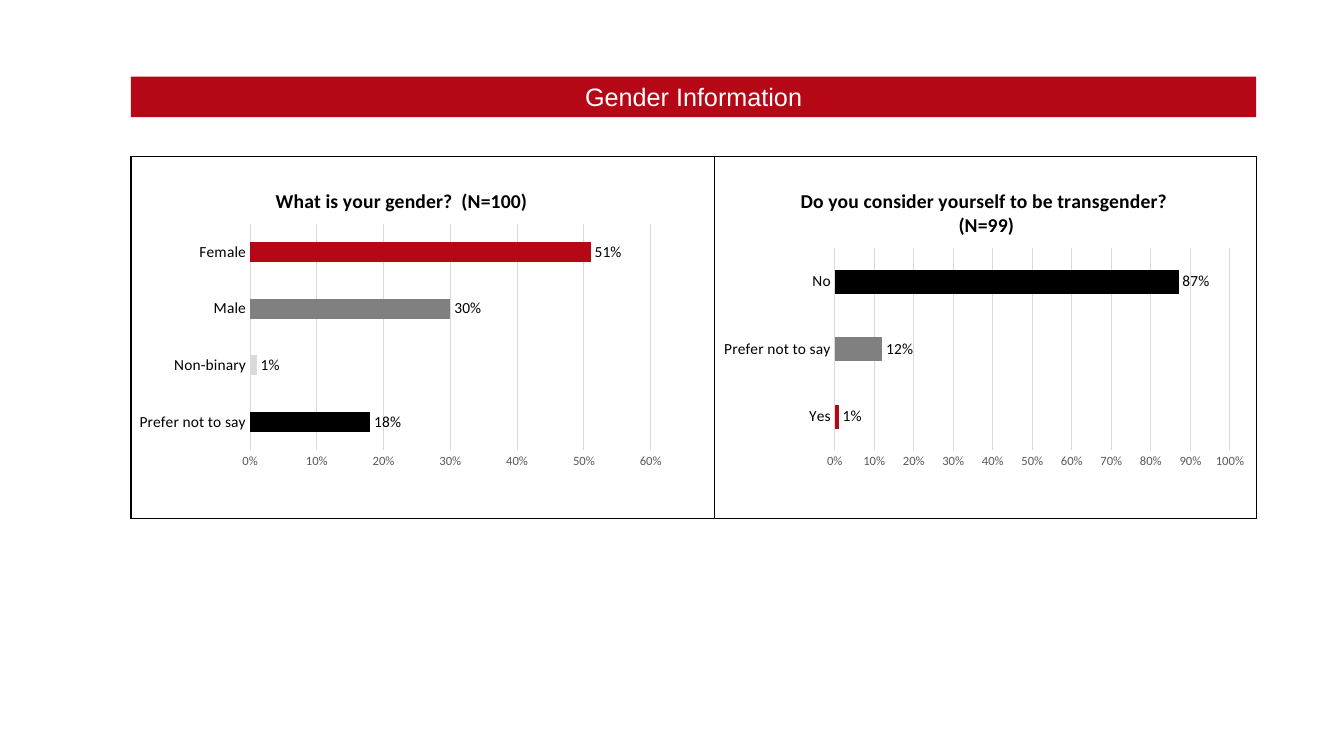
from dataclasses import dataclass

from pptx import Presentation
from pptx.chart.data import CategoryChartData as ChartData
from pptx.dml.color import RGBColor
from pptx.enum.chart import XL_CHART_TYPE as ChartType
from pptx.enum.chart import XL_LABEL_POSITION as LabelPosition
from pptx.enum.chart import XL_TICK_MARK as TickMark
from pptx.enum.shapes import MSO_SHAPE as Preset
from pptx.enum.text import MSO_ANCHOR as Anchor
from pptx.enum.text import MSO_AUTO_SIZE as AutoSize
from pptx.enum.text import PP_ALIGN as Align
from pptx.oxml import parse_xml
from pptx.oxml.ns import nsdecls
from pptx.util import Cm, Pt


@dataclass(frozen=True)
class Theme:
    red: str = "B60717"
    black: str = "000000"
    gray: str = "808080"
    light: str = "D9D9D9"
    muted: str = "595959"
    white: str = "FFFFFF"
    series: str = "5B9BD5"
    banner_font: str = "Arial"
    chart_font: str = "Calibri"
    banner_size: int = 18
    heading_size: int = 14
    label_size: int = 11
    base_size: int = 10
    scale_size: int = 9


def set_values(target, values):
    for name, value in values.items():
        setattr(target, name, value)


class SlideBuilder:
    def __init__(self, deck, theme):
        self.theme = theme
        self.slide = deck.slides.add_slide(deck.slide_layouts[5])

    def style_font(self, font, name, size, color, bold=False):
        set_values(font, {"name": name, "size": Pt(size), "bold": bold})
        font.color.rgb = RGBColor.from_string(color)

    def style_fill(self, fill, color):
        fill.solid()
        fill.fore_color.rgb = RGBColor.from_string(color)

    def style_line(self, line, color, width):
        self.style_fill(line.fill, color)
        line.width = Pt(width)

    def banner(self, text, left, top, width, height):
        theme = self.theme
        box = self.slide.shapes.title
        set_values(box, {"left": Cm(left), "top": Cm(top),
                         "width": Cm(width), "height": Cm(height)})
        self.style_fill(box.fill, theme.red)
        set_values(box.text_frame, {"word_wrap": True, "auto_size": AutoSize.NONE,
                                    "vertical_anchor": Anchor.MIDDLE})
        para = box.text_frame.paragraphs[0]
        para.alignment = Align.CENTER
        span = para.add_run()
        span.text = text
        self.style_font(span.font, theme.banner_font, theme.banner_size, theme.white)

    def frame(self, left, top, width, height):
        box = self.slide.shapes.add_shape(
            Preset.RECTANGLE, Cm(left), Cm(top), Cm(width), Cm(height))
        box.shadow.inherit = False
        box.fill.background()
        self.style_line(box.line, self.theme.black, 1)

    def bar_chart(self, heading, bars, maximum, area, left, top, width, height):
        theme = self.theme
        data = ChartData(number_format="0%")
        data.categories = [name for name, _, _ in bars]
        data.add_series("Series 1", [value for _, value, _ in bars])
        chart = self.slide.shapes.add_chart(
            ChartType.BAR_CLUSTERED, Cm(left), Cm(top), Cm(width), Cm(height), data).chart
        chart.has_legend = False
        self.style_font(chart.font, theme.chart_font, theme.base_size, theme.black)
        self.chart_heading(chart, heading)
        self.axes(chart, maximum)
        self.bars(chart.plots[0], [color for _, _, color in bars])
        self.plot_area(chart, area)

    def chart_heading(self, chart, heading):
        theme = self.theme
        chart.has_title = True
        chart.chart_title.include_in_layout = False
        span = chart.chart_title.text_frame.paragraphs[0].add_run()
        span.text = heading
        self.style_font(span.font, theme.chart_font, theme.heading_size, theme.black, True)

    def axes(self, chart, maximum):
        theme = self.theme
        names, scale = chart.category_axis, chart.value_axis
        for axis, size, color in ((names, theme.label_size, theme.black),
                                  (scale, theme.scale_size, theme.muted)):
            set_values(axis, {"major_tick_mark": TickMark.NONE,
                              "minor_tick_mark": TickMark.NONE})
            self.style_font(axis.tick_labels.font, theme.chart_font, size, color)
        names.has_major_gridlines = False
        self.style_line(names.format.line, theme.light, 0.75)
        set_values(scale, {"minimum_scale": 0, "maximum_scale": maximum,
                           "major_unit": 0.1, "has_major_gridlines": True})
        set_values(scale.tick_labels, {"number_format": "0%",
                                       "number_format_is_linked": False})
        scale.format.line.fill.background()
        self.style_line(scale.major_gridlines.format.line, theme.light, 0.75)

    def bars(self, plot, colors):
        theme = self.theme
        set_values(plot, {"gap_width": 182, "vary_by_categories": False})
        series = plot.series[0]
        series.invert_if_negative = False
        self.style_fill(series.format.fill, theme.series)
        for index, color in enumerate(colors):
            self.style_fill(series.points[index].format.fill, color)
        labels = series.data_labels
        set_values(labels, {"show_value": True, "position": LabelPosition.OUTSIDE_END,
                            "number_format": "0%", "number_format_is_linked": False})
        self.style_font(labels.font, theme.chart_font, theme.label_size, theme.black)

    def plot_area(self, chart, area):
        plot_area = chart.element.xpath("c:chart/c:plotArea")[0]
        for layout in plot_area.xpath("c:layout"):
            plot_area.remove(layout)
        places = "".join(f'<c:{tag} val="{value}"/>' for tag, value in zip("xywh", area))
        plot_area.insert(0, parse_xml(
            f'<c:layout {nsdecls("c")}><c:manualLayout><c:layoutTarget val="inner"/>'
            f'<c:xMode val="edge"/><c:yMode val="edge"/>{places}'
            '</c:manualLayout></c:layout>'))


def main():
    theme = Theme()
    deck = Presentation()
    set_values(deck, {"slide_width": Cm(33.86), "slide_height": Cm(19.05)})
    page = SlideBuilder(deck, theme)
    left, width = 3.3, 28.35
    page.banner("Gender Information", left, 1.93, width, 1.02)

    gender = [("Prefer not to say", 0.18, theme.black), ("Non-binary", 0.01, theme.light),
              ("Male", 0.3, theme.gray), ("Female", 0.51, theme.red)]
    transgender = [("Yes", 0.01, theme.red), ("Prefer not to say", 0.12, theme.gray),
                   ("No", 0.87, theme.black)]
    charts = [
        ("What is your gender?  (N=100)", gender, 0.6, (0.22, 0.17, 0.74, 0.75), left),
        ("Do you consider yourself to be transgender?  (N=99)", transgender, 1,
         (0.22, 0.25, 0.73, 0.67), 18.03),
    ]
    for heading, bars, maximum, area, start in charts:
        page.bar_chart(heading, bars, maximum, area, start, 4.34, 13.64, 7.62)

    for frame_width in (width, 14.71):
        page.frame(left, 3.94, frame_width, 9.12)
    deck.save("out.pptx")


if __name__ == "__main__":
    main()
